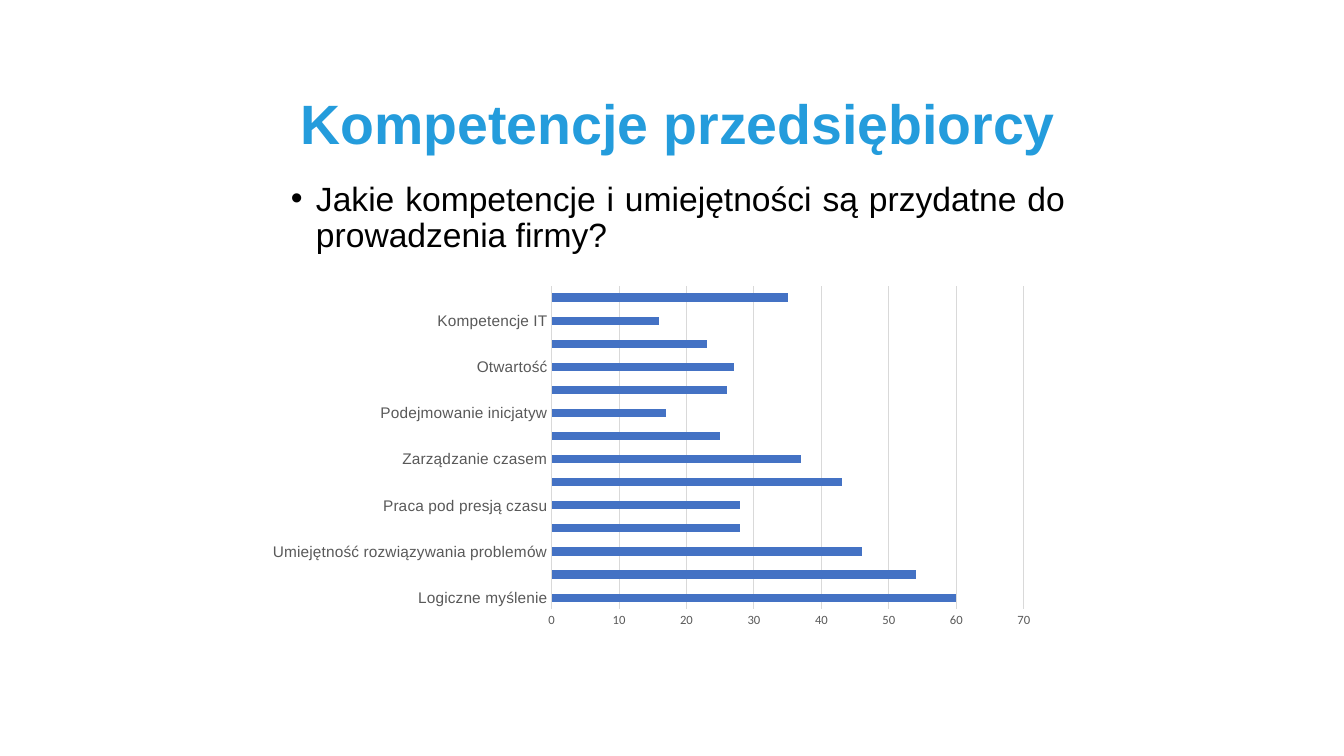
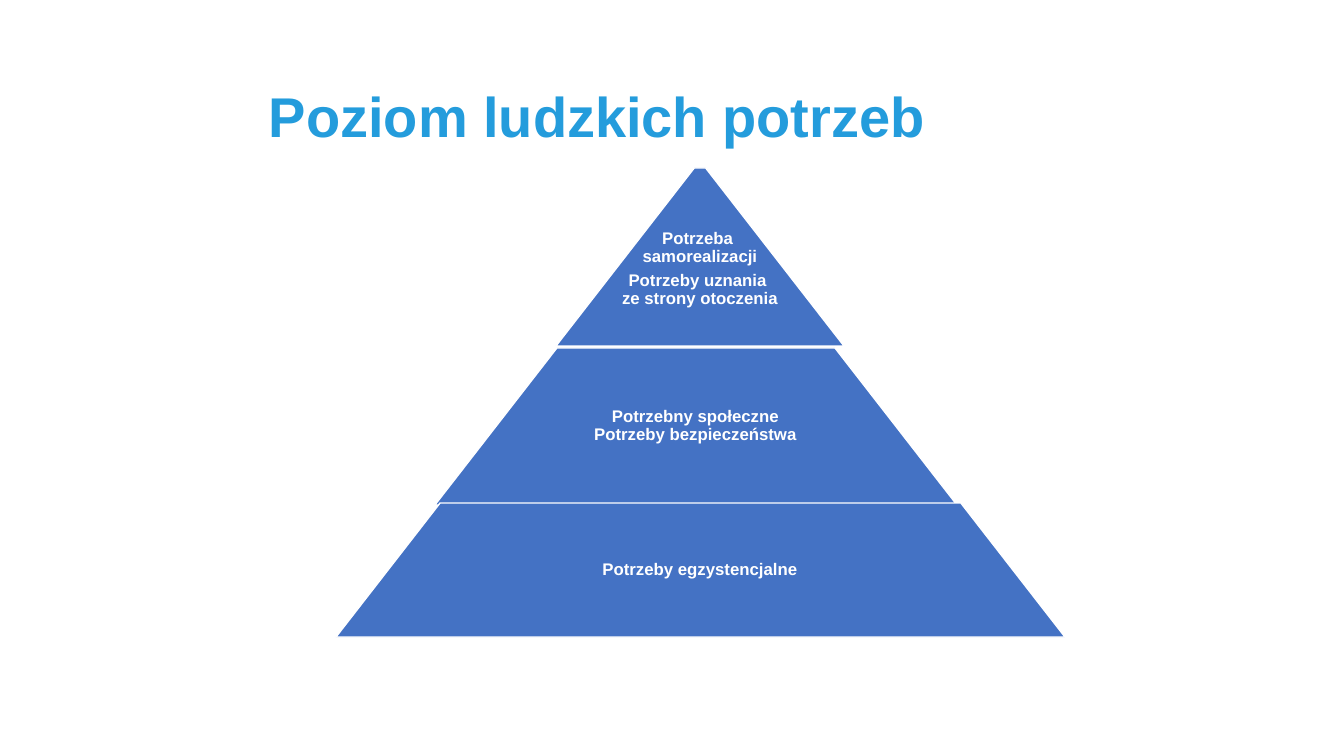
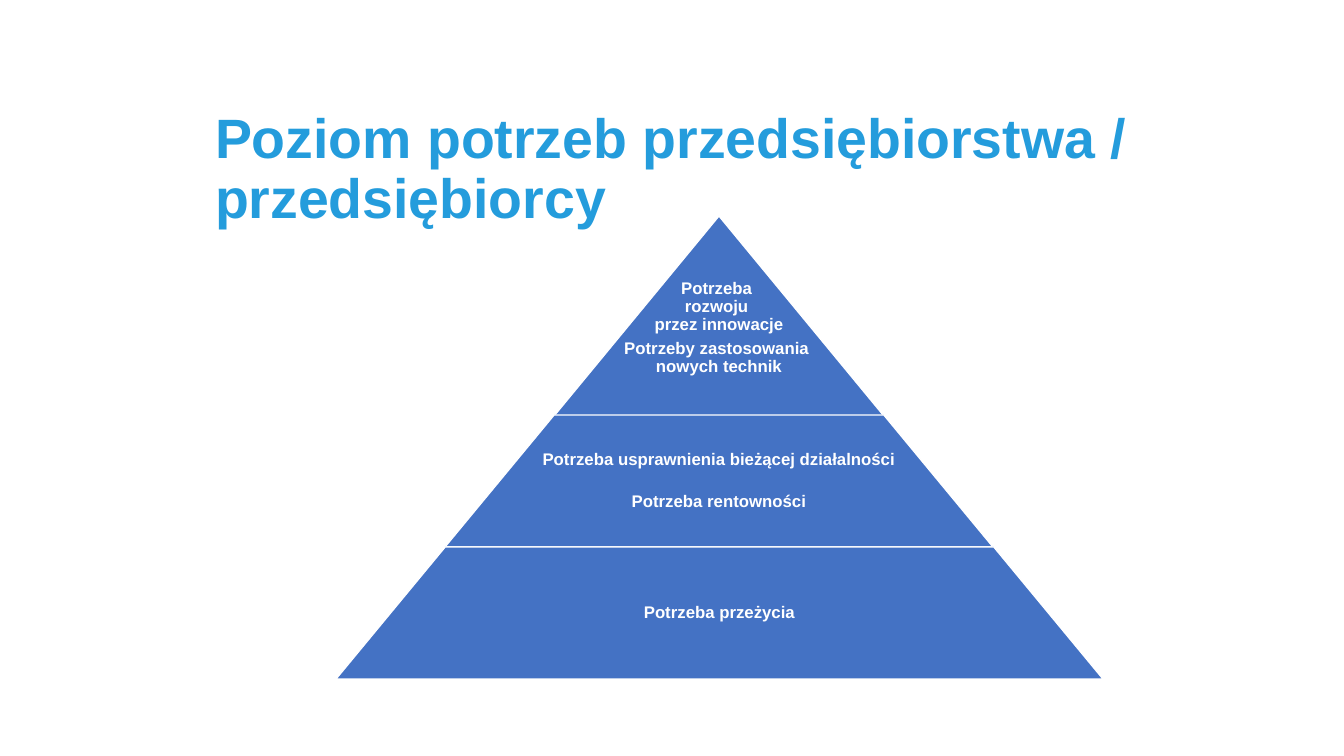
"""Build three slides on entrepreneurial skills and pyramids of needs."""
from copy import deepcopy

from lxml import etree
from pptx import Presentation
from pptx.chart.data import CategoryChartData
from pptx.dml.color import RGBColor
from pptx.enum.chart import XL_CHART_TYPE, XL_TICK_MARK
from pptx.enum.shapes import MSO_SHAPE
from pptx.enum.text import MSO_ANCHOR, MSO_AUTO_SIZE, PP_ALIGN
from pptx.oxml.ns import qn
from pptx.util import Emu, Pt

LEFT, CENTER, JUSTIFY = PP_ALIGN.LEFT, PP_ALIGN.CENTER, PP_ALIGN.JUSTIFY
TOP, MIDDLE = MSO_ANCHOR.TOP, MSO_ANCHOR.MIDDLE
NO_AUTOFIT = MSO_AUTO_SIZE.NONE
TRAPEZOID = MSO_SHAPE.TRAPEZOID
BAR = XL_CHART_TYPE.BAR_CLUSTERED
NO_TICK = XL_TICK_MARK.NONE

COLORS = {
    "title": "249CDC",
    "body": "000000",
    "fill": "4472C4",
    "white": "FFFFFF",
    "label": "595959",
    "grid": "D9D9D9",
}
COLORS = {name: RGBColor.from_string(value) for name, value in COLORS.items()}
FONT = "Arial"
TITLE_ONLY = 5


def px(*lengths):
    """Turn pixels at 100.8 per inch into EMU."""
    return [Emu(round(length * 914400 / 100.8)) for length in lengths]


def write(shape, paragraphs, size=12, color="white", bold=True, align=CENTER,
          anchor=MIDDLE, insets=(10, 5, 10, 5), after=0, gap=0, bullet=False):
    """Fill a shape with formatted paragraphs."""
    frame = shape.text_frame
    frame.word_wrap = True
    frame.auto_size = NO_AUTOFIT
    frame.vertical_anchor = anchor
    (frame.margin_left, frame.margin_top,
     frame.margin_right, frame.margin_bottom) = px(*insets)
    for index, text in enumerate(paragraphs):
        paragraph = frame.add_paragraph() if index else frame.paragraphs[0]
        paragraph.text = text
        paragraph.alignment = align
        paragraph.line_spacing = 0.9
        paragraph.space_before = Pt(gap if index else 0)
        paragraph.space_after = Pt(after)
        if bullet:
            properties = paragraph._p.get_or_add_pPr()
            indent = px(25)[0]
            properties.set("marL", str(indent))
            properties.set("indent", str(-indent))
            etree.SubElement(properties, qn("a:buFont")).set("typeface", FONT)
            etree.SubElement(properties, qn("a:buChar")).set("char", "•")
        for run in paragraph.runs:
            run.font.name = FONT
            run.font.size = Pt(size)
            run.font.bold = bold
            run.font.color.rgb = COLORS[color]
        for line_break in paragraph._p.findall(qn("a:br")):
            line_break.insert(0, deepcopy(paragraph.runs[0]._r.rPr))


presentation = Presentation()
presentation.slide_width, presentation.slide_height = px(1344, 756)

titles = [
    ("Kompetencje przedsiębiorcy", (281, 76, 794, 102), 39.6, CENTER),
    ("Poziom ludzkich potrzeb", (259, 46, 993, 146), 40, LEFT),
    ("Poziom potrzeb przedsiębiorstwa / przedsiębiorcy", (205, 89, 981, 163), 39.6, LEFT),
]
slides = []
for text, box, size, align in titles:
    slide = presentation.slides.add_slide(presentation.slide_layouts[TITLE_ONLY])
    title = slide.shapes.title
    title.left, title.top, title.width, title.height = px(*box)
    write(title, [text], size=size, color="title", align=align)
    slides.append(slide)
skills_slide, *pyramid_slides = slides

question = skills_slide.shapes.add_textbox(*px(281, 177, 794, 470))
write(question, ["Jakie kompetencje i umiejętności są przydatne do prowadzenia firmy?"],
      size=24, color="body", bold=False, align=JUSTIFY, anchor=TOP, bullet=True)

skills = {
    "Logiczne myślenie": 60,
    "Kreatywność": 54,
    "Umiejętność rozwiązywania problemów": 46,
    "Praca w grupie": 28,
    "Praca pod presją czasu": 28,
    "Umiejętności komunikacyjne": 43,
    "Zarządzanie czasem": 37,
    "Umiejętności przywódcze": 25,
    "Podejmowanie inicjatyw": 17,
    "Umiejetności negocjacyjne": 26,
    "Otwartość": 27,
    "Asertywność": 23,
    "Kompetencje IT": 16,
    "Budowanie dobrych relazji z partnerami, klientami": 35,
}
chart_data = CategoryChartData()
chart_data.categories = list(skills)
chart_data.add_series("Series 1", list(skills.values()))
chart = skills_slide.shapes.add_chart(BAR, *px(257, 279, 789, 356), chart_data).chart
chart.has_legend = False
chart.has_title = False
chart.font.name = "Calibri"
chart.font.size = Pt(10)
chart.font.color.rgb = COLORS["body"]
plot = chart.plots[0]
plot.gap_width = 182
plot.vary_by_categories = False
bars = plot.series[0]
bars.format.fill.solid()
bars.format.fill.fore_color.rgb = COLORS["fill"]

skill_axis, value_axis = chart.category_axis, chart.value_axis
for axis, font_name, size in ((skill_axis, FONT, 11), (value_axis, "Calibri", 9)):
    axis.major_tick_mark = axis.minor_tick_mark = NO_TICK
    axis.tick_labels.font.name = font_name
    axis.tick_labels.font.size = Pt(size)
    axis.tick_labels.font.color.rgb = COLORS["label"]
value_axis.minimum_scale, value_axis.maximum_scale = 0, 70
value_axis.major_unit = 10
value_axis.format.line.fill.background()
for line in (skill_axis.format.line, value_axis.major_gridlines.format.line):
    line.color.rgb = COLORS["grid"]
    line.width = Pt(0.75)

pyramids = [
    (0.777, [
        ((556, 168, 288, 178), ["Potrzeba \vsamorealizacji",
                                "Potrzeby uznania \vze strony otoczenia"]),
        ((435, 348, 522, 157), ["Potrzebny społeczne\vPotrzeby bezpieczeństwa"]),
        ((336, 503, 729, 134), ["Potrzeby egzystencjalne"]),
    ]),
    (0.827, [
        ((554, 216, 330, 200), ["Potrzeba \vrozwoju \vprzez innowacje",
                                "Potrzeby zastosowania \vnowych technik"]),
        ((445, 415, 548, 132), ["Potrzeba usprawnienia bieżącej działalności",
                                "Potrzeba rentowności"]),
        ((336, 547, 767, 132), ["Potrzeba przeżycia"]),
    ]),
]
for slide, (slope, levels) in zip(pyramid_slides, pyramids):
    for index, (box, needs) in enumerate(levels):
        level = slide.shapes.add_shape(TRAPEZOID, *px(*box))
        level.adjustments[0] = slope
        level.shadow.inherit = False
        level.fill.solid()
        level.fill.fore_color.rgb = COLORS["fill"]
        level.line.color.rgb = COLORS["white"]
        level.line.width = Pt(1)

        left, top, width, height = box
        label_width = round(width * 0.65) if index else width
        label_left = left + (width - label_width) // 2
        label = slide.shapes.add_textbox(*px(label_left, top, label_width, height))
        write(label, needs, insets=(0, 2 if index else 26, 0, 2),
              after=4.2, gap=13 if index else 0)

presentation.save("out.pptx")
